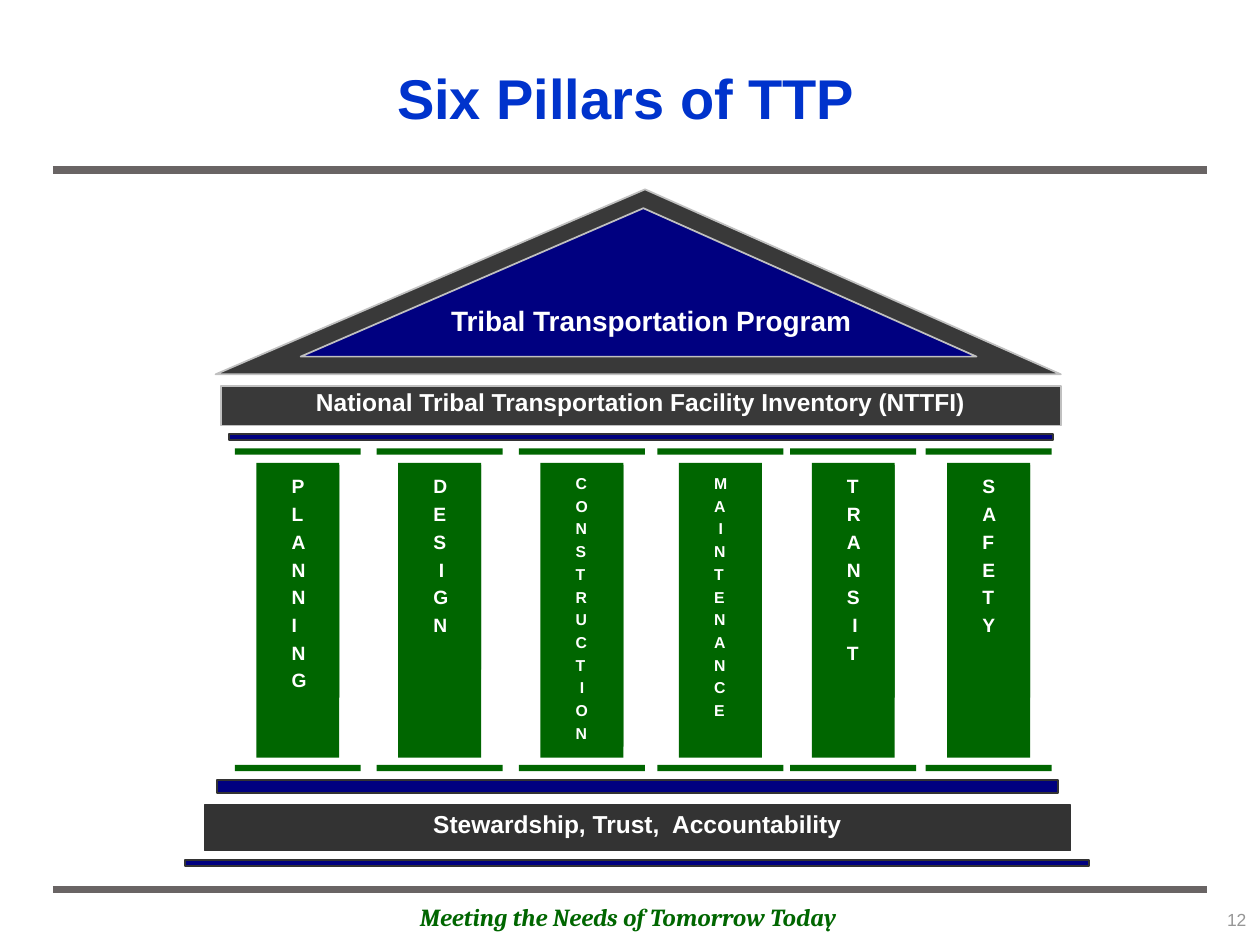
from pptx import Presentation
from pptx.dml.color import RGBColor
from pptx.enum.shapes import MSO_CONNECTOR, MSO_SHAPE
from pptx.enum.text import MSO_ANCHOR, PP_ALIGN
from pptx.oxml.ns import qn
from pptx.util import Pt
from lxml import etree

RECT = MSO_SHAPE.RECTANGLE
STRAIGHT = MSO_CONNECTOR.STRAIGHT
TOP, MIDDLE = MSO_ANCHOR.TOP, MSO_ANCHOR.MIDDLE
LEFT, CENTER, RIGHT = PP_ALIGN.LEFT, PP_ALIGN.CENTER, PP_ALIGN.RIGHT

GREEN, NAVY, WHITE = "006600", "000080", "FFFFFF"
CHARCOAL, DARK, SILVER, RULE = "393939", "333333", "C0C0C0", "696464"

TITLE = "Six Pillars of TTP"
RULES_Y = (97.2, 508.3)
ROOF = [
    (((123.2, 213.9), (606.2, 213.9), (368.6, 108.2)), CHARCOAL),
    (((171.8, 203.8), (558, 203.8), (367.7, 119)), NAVY),
]
BANDS = [
    ((126.4, 220.6, 479.8, 22.6), CHARCOAL, SILVER),
    ((130.9, 247.9, 471, 3.6), NAVY, DARK),
    ((123.9, 445.8, 480.6, 7.4), NAVY, DARK),
    ((116.9, 460, 494.8, 26), DARK, DARK),
    ((105.8, 491.4, 516.6, 3.5), NAVY, DARK),
]
CAPTIONS = [
    ("Tribal Transportation Program", (246.2, 171.4, 252, 23.8), 16),
    ("National Tribal Transportation Facility Inventory (NTTFI)",
     (149.8, 218.9, 432.7, 38.2), 14),
    ("Stewardship, Trust,  Accountability", (131, 460, 466.6, 21.6), 14),
]
PILLARS = [
    ("P/L/A/N/N/I/N/G", 134.2, 11, 133),
    ("D/E/S/ I/G/N", 215.3, 11, 117),
    ("C/O/N/S/T/R/U/C/T/ I/O/N", 296.5, 9, 161),
    ("M/A/ I/N/T/E/N/A/N/C/E", 375.7, 9, 164),
    ("T/R/A/N/S/ I/T", 451.6, 11, 133),
    ("S/A/F/E/T/Y", 529, 11, 133),
]
CAP_W, CAP_H, CAP_Y, BASE_Y = 72, 3.6, 256.2, 437.1
SHAFT_W, SHAFT_Y, SHAFT_H = 47.4, 264.5, 168.5
LABEL_W, LABEL_Y = 33.1, 265.7


def rgb(value):
    """Return the colour for a hex string."""
    return RGBColor.from_string(value)


def write(sp, lines, size, color=WHITE, font="Arial", bold=True, italic=False,
          align=CENTER, anchor=TOP, inset=(4.3, 2.2), spacing=None):
    """Fill a shape with one formatted paragraph per line."""
    tf = sp.text_frame
    tf.word_wrap = True
    tf.vertical_anchor = anchor
    tf.margin_left = tf.margin_right = Pt(inset[0])
    tf.margin_top = tf.margin_bottom = Pt(inset[1])
    for i, line in enumerate(lines):
        p = tf.add_paragraph() if i else tf.paragraphs[0]
        p.alignment = align
        if spacing:
            p.line_spacing = spacing
        r = p.add_run()
        r.text = line
        r.font.size, r.font.name = Pt(size), font
        r.font.bold, r.font.italic = bold, italic
        r.font.color.rgb = rgb(color)


def paint(sp, fill, line=None):
    """Set the fill and outline of a shape and drop its shadow."""
    sp.shadow.inherit = False
    sp.fill.solid()
    sp.fill.fore_color.rgb = rgb(fill)
    if line:
        sp.line.color.rgb = rgb(line)
        sp.line.width = Pt(1)
    else:
        sp.line.fill.background()


def add_rect(s, box, fill, line=None):
    """Add a painted rectangle."""
    sp = s.shapes.add_shape(RECT, *map(Pt, box))
    paint(sp, fill, line)
    return sp


def add_text(s, text, box, size, **fmt):
    """Add a text box with one line of text."""
    write(s.shapes.add_textbox(*map(Pt, box)), [text], size, **fmt)


def add_rule(s, y):
    """Add a horizontal rule across the slide."""
    cx = s.shapes.add_connector(STRAIGHT, Pt(30.2), Pt(y), Pt(689.8), Pt(y))
    cx.line.color.rgb = rgb(RULE)
    cx.line.width = Pt(4.5)
    etree.SubElement(cx.element.spPr, qn("a:effectLst"))


def add_triangle(s, points, fill):
    """Add a roof triangle through three points."""
    start, *rest = [(Pt(x), Pt(y)) for x, y in points]
    fb = s.shapes.build_freeform(*start)
    fb.add_line_segments(rest, close=True)
    paint(fb.convert_to_shape(), fill, SILVER)


def add_pillar(s, letters, x, size, label_h):
    """Add a pillar with its base, cap, shaft and stacked letters."""
    for y in (BASE_Y, CAP_Y):
        add_rect(s, (x, y, CAP_W, CAP_H), GREEN)
    shaft_x = x + (CAP_W - SHAFT_W) / 2
    add_rect(s, (shaft_x, SHAFT_Y, SHAFT_W, SHAFT_H), GREEN)
    label_x = shaft_x + SHAFT_W - LABEL_W
    label = add_rect(s, (label_x, LABEL_Y, LABEL_W, label_h), GREEN)
    write(label, letters.split("/"), size, align=LEFT, inset=(5.8, 2.9),
          spacing=1.2)


def main():
    """Build the slide and save it."""
    prs = Presentation()
    prs.slide_width, prs.slide_height = Pt(720), Pt(540)
    s = prs.slides.add_slide(prs.slide_layouts[5])
    for y in RULES_Y:
        add_rule(s, y)
    title = s.shapes.title
    title.left, title.top = Pt(108.3), Pt(29.5)
    title.width, title.height = Pt(499), Pt(51.8)
    write(title, [TITLE], 32, color="0033CC", anchor=MIDDLE, inset=(7.2, 3.6))
    add_text(s, "Meeting the Needs of Tomorrow Today", (88.6, 511.9, 540.7, 24.5),
             14, color=GREEN, font="Cambria", italic=True, inset=(7.2, 3.6))
    add_text(s, "12", (629.3, 516.2, 90, 23.8), 10, color="969696", bold=False,
             align=RIGHT, inset=(7.2, 3.6))
    for points, fill in ROOF:
        add_triangle(s, points, fill)
    for box, fill, line in BANDS:
        add_rect(s, box, fill, line)
    for text, box, size in CAPTIONS:
        add_text(s, text, box, size)
    for pillar in PILLARS:
        add_pillar(s, *pillar)
    prs.save("out.pptx")


if __name__ == "__main__":
    main()
